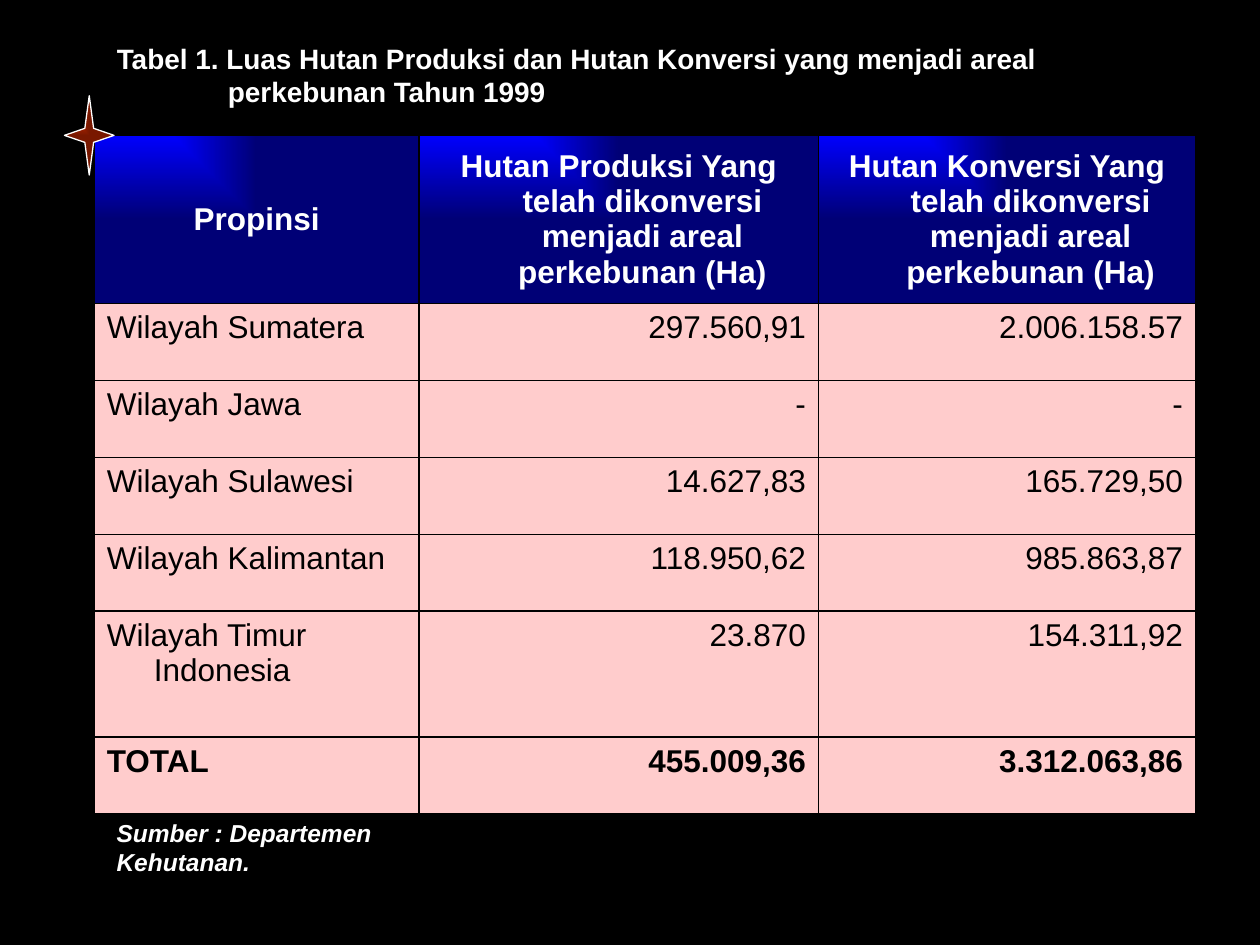
from lxml import etree
from pptx import Presentation
from pptx import util as u
from pptx.dml.color import RGBColor
from pptx.enum import shapes, text
from pptx.oxml import parse_xml
from pptx.oxml.ns import nsdecls, qn

COLORS = {
    "black": "000000",
    "white": "FFFFFF",
    "blue": "0000FF",
    "navy": "000076",
    "pink": "FFCCCC",
    "red": "FF3300",
    "maroon": "791800",
}
FONT = "Arial"
COLS = [6.55, 8.05, 7.6]
ROW, HEADER_ROW, TALL_ROW = 1.55, 3.4, 2.54
ROWS = [
    ("Propinsi",
     "Hutan Produksi Yang telah dikonversi menjadi areal perkebunan (Ha)",
     "Hutan Konversi Yang telah dikonversi menjadi areal perkebunan (Ha)"),
    ("Wilayah Sumatera", "297.560,91", "2.006.158.57"),
    ("Wilayah Jawa", "-", "-"),
    ("Wilayah Sulawesi", "14.627,83", "165.729,50"),
    ("Wilayah Kalimantan", "118.950,62", "985.863,87"),
    ("Wilayah Timur Indonesia", "23.870", "154.311,92"),
    ("TOTAL", "455.009,36", "3.312.063,86"),
]


def rgb(name):
    return RGBColor.from_string(COLORS[name])


def write(tf, words, size, color, bold=False, italic=False,
          align=text.PP_ALIGN.LEFT, hang=0):
    """Set one paragraph of text, with a hanging indent in cm."""
    tf.text = words
    p = tf.paragraphs[0]
    p.alignment = align
    if hang:
        pPr = p._p.get_or_add_pPr()
        pPr.set("marL", str(u.Cm(hang)))
        pPr.set("indent", str(-u.Cm(hang)))
    font = p.runs[0].font
    font.name, font.size = FONT, u.Pt(size)
    font.bold, font.italic = bold, italic
    font.color.rgb = rgb(color)


def corner_gradient(fill, props, start, end):
    """Fill with a rectangular gradient that spreads from the top left."""
    fill.background()
    grad = parse_xml(
        f'<a:gradFill {nsdecls("a")} rotWithShape="0"><a:gsLst>'
        f'<a:gs pos="0"><a:srgbClr val="{COLORS[start]}"/></a:gs>'
        f'<a:gs pos="100000"><a:srgbClr val="{COLORS[end]}"/></a:gs>'
        '</a:gsLst><a:path path="rect">'
        '<a:fillToRect r="100000" b="100000"/></a:path></a:gradFill>')
    props.replace(props.find(qn("a:noFill")), grad)


def add_borders(tcPr, color, width):
    for i, side in enumerate(("lnL", "lnR", "lnT", "lnB")):
        ln = etree.Element(qn(f"a:{side}"), w=str(u.Pt(width)))
        solid = etree.SubElement(ln, qn("a:solidFill"))
        etree.SubElement(solid, qn("a:srgbClr"), val=COLORS[color])
        tcPr.insert(i, ln)


def add_title(s):
    sp = s.shapes.title
    sp.left, sp.top, sp.width, sp.height = (
        u.Cm(2.1), u.Cm(0.7), u.Cm(21.8), u.Cm(2.28))
    tf = sp.text_frame
    tf.auto_size = text.MSO_AUTO_SIZE.NONE
    tf.vertical_anchor = text.MSO_ANCHOR.TOP
    write(tf, "Tabel 1. Luas Hutan Produksi dan Hutan Konversi yang menjadi "
          "areal perkebunan Tahun 1999", 16, "white", bold=True, hang=2.24)


def add_forest_table(s):
    heights = [HEADER_ROW] + [ROW] * 4 + [TALL_ROW, ROW]
    table = s.shapes.add_table(
        len(ROWS), len(COLS), u.Cm(1.9), u.Cm(2.72),
        u.Cm(sum(COLS)), u.Cm(sum(heights))).table
    table.horz_banding = False
    for column, width in zip(table.columns, COLS):
        column.width = u.Cm(width)
    for row, height in zip(table.rows, heights):
        row.height = u.Cm(height)

    for i, values in enumerate(ROWS):
        header, total = i == 0, i == len(ROWS) - 1
        for j, value in enumerate(values):
            cell = table.cell(i, j)
            tcPr = cell._tc.get_or_add_tcPr()
            if header:
                align = text.PP_ALIGN.CENTER
                cell.vertical_anchor = text.MSO_ANCHOR.MIDDLE
                corner_gradient(cell.fill, tcPr, "blue", "navy")
            else:
                align = text.PP_ALIGN.RIGHT if j else text.PP_ALIGN.LEFT
                cell.fill.solid()
                cell.fill.fore_color.rgb = rgb("pink")
            write(cell.text_frame, value, 18, "white" if header else "black",
                  bold=header or total, align=align, hang=0.95)
            add_borders(tcPr, "black", 1)


def add_source_note(s):
    sp = s.shapes.add_textbox(u.Cm(2.1), u.Cm(16.66), u.Cm(8.4), u.Cm(0.85))
    tf = sp.text_frame
    tf.word_wrap = True
    tf.vertical_anchor = text.MSO_ANCHOR.MIDDLE
    write(tf, "Sumber : Departemen Kehutanan.", 14, "white",
          bold=True, italic=True)


def add_star(s):
    sp = s.shapes.add_shape(shapes.MSO_SHAPE.STAR_4_POINT,
                            u.Cm(1.3), u.Cm(1.93), u.Cm(1), u.Cm(1.6))
    sp.adjustments[0] = 0.125
    sp.shadow.inherit = False
    corner_gradient(sp.fill, sp._element.spPr, "red", "maroon")
    sp.line.color.rgb = rgb("white")
    sp.line.width = u.Pt(0.75)


def main():
    prs = Presentation()
    prs.slide_width, prs.slide_height = u.Cm(25.4), u.Cm(19.05)
    s = prs.slides.add_slide(prs.slide_layouts[5])  # title only
    s.background.fill.solid()
    s.background.fill.fore_color.rgb = rgb("black")
    add_title(s)
    add_forest_table(s)
    add_source_note(s)
    add_star(s)
    prs.save("out.pptx")


if __name__ == "__main__":
    main()
